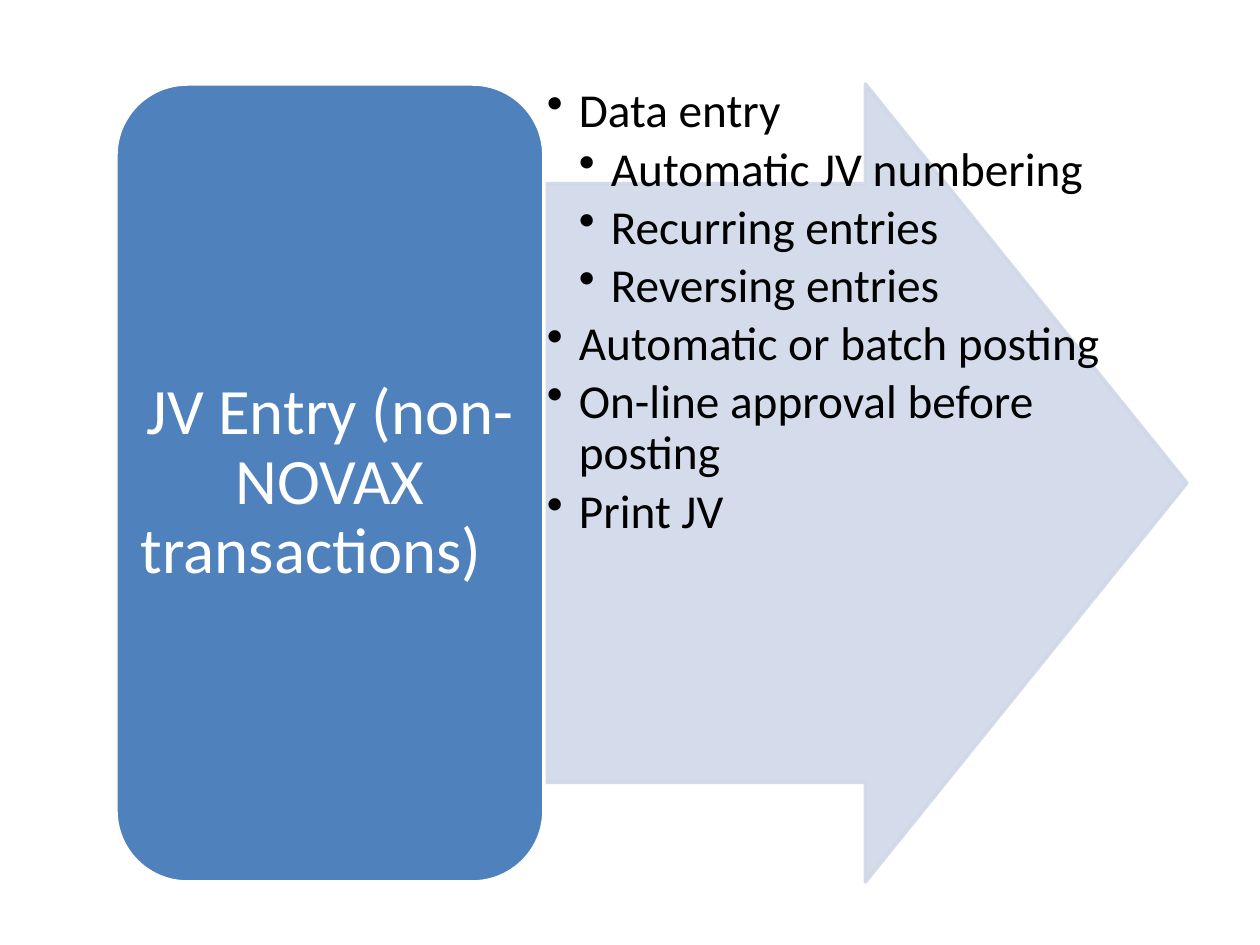
from dataclasses import dataclass

import pptx
import pptx.dml.color
import pptx.enum.shapes
import pptx.enum.text
import pptx.oxml
import pptx.oxml.ns
import pptx.util

SHAPE = pptx.enum.shapes.MSO_SHAPE
ALIGN = pptx.enum.text.PP_ALIGN
ANCHOR = pptx.enum.text.MSO_ANCHOR
NS = pptx.oxml.ns.nsdecls("a")
QN = pptx.oxml.ns.qn


@dataclass(frozen=True)
class Theme:
    font: str = "Calibri"
    block: str = "4F81BD"
    arrow: str = "D0D8E8"
    light: str = "FFFFFF"
    dark: str = "000000"
    title_pt: int = 37
    list_pt: int = 27
    line_pt: int = 2


@dataclass(frozen=True)
class Box:
    x: int
    y: int
    w: int
    h: int


@dataclass(frozen=True)
class Panel:
    box: Box
    kind: int
    adjustments: tuple[float, ...]
    fill: str
    line: str
    opacity: int


@dataclass(frozen=True)
class Item:
    text: str
    level: int = 0


@dataclass(frozen=True)
class TextBlock:
    box: Box
    items: tuple[Item, ...]
    size: int
    color: str
    inset_x: int
    inset_y: int
    anchor: int
    align: int
    space_after: int
    bullets: bool


THEME = Theme()
INDENT = 32
TOP, HEIGHT = 84, 798
BLOCK_BOX = Box(116, TOP, 428, HEIGHT)
ARROW_BOX = Box(BLOCK_BOX.x + BLOCK_BOX.w, TOP, 643, HEIGHT)

PANELS = (
    Panel(ARROW_BOX, SHAPE.RIGHT_ARROW, (0.75, 0.5), THEME.arrow, THEME.arrow, 90),
    Panel(BLOCK_BOX, SHAPE.ROUNDED_RECTANGLE, (), THEME.block, THEME.light, 100),
)

FEATURES = (
    Item("Data entry"),
    Item("Automatic JV numbering", 1),
    Item("Recurring entries", 1),
    Item("Reversing entries", 1),
    Item("Automatic or batch posting"),
    Item("On-line approval before posting"),
    Item("Print JV"),
)

TEXTS = (
    TextBlock(ARROW_BOX, FEATURES, THEME.list_pt, THEME.dark,
              3, 3, ANCHOR.TOP, ALIGN.LEFT, 15, True),
    TextBlock(BLOCK_BOX, (Item("JV Entry (non-NOVAX transactions)\t"),),
              THEME.title_pt, THEME.light,
              19, 10, ANCHOR.MIDDLE, ALIGN.CENTER, 35, False),
)


def px(n: int) -> int:
    return round(n * 914400 / 126)


def place(box: Box) -> tuple[int, ...]:
    return px(box.x), px(box.y), px(box.w), px(box.h)


def rgb(color: str) -> pptx.dml.color.RGBColor:
    return pptx.dml.color.RGBColor.from_string(color)


def draw_panel(s: pptx.slide.Slide, panel: Panel) -> None:
    sp = s.shapes.add_shape(panel.kind, *place(panel.box))
    sp.shadow.inherit = False
    for i, value in enumerate(panel.adjustments):
        sp.adjustments[i] = value
    sp.fill.solid()
    sp.fill.fore_color.rgb = rgb(panel.fill)
    sp.line.color.rgb = rgb(panel.line)
    sp.line.width = pptx.util.Pt(THEME.line_pt)
    if panel.opacity < 100:
        for color in sp._element.spPr.iter(QN("a:srgbClr")):
            color.append(pptx.oxml.parse_xml(
                f'<a:alpha {NS} val="{panel.opacity * 1000}"/>'))


def draw_text(s: pptx.slide.Slide, block: TextBlock) -> None:
    tf = s.shapes.add_textbox(*place(block.box)).text_frame
    tf.word_wrap = True
    tf.vertical_anchor = block.anchor
    tf.margin_left = tf.margin_right = px(block.inset_x)
    tf.margin_top = tf.margin_bottom = px(block.inset_y)
    tf.text = "\n".join(item.text for item in block.items)
    for p, item in zip(tf.paragraphs, block.items):
        p.alignment = block.align
        p.line_spacing = 0.9
        pPr = p._p.get_or_add_pPr()
        pPr.append(pptx.oxml.parse_xml(
            f'<a:spcAft {NS}><a:spcPct val="{block.space_after * 1000}"/></a:spcAft>'))
        if block.bullets:
            p.level = item.level + 1
            pPr.set("marL", str(px(INDENT * (item.level + 1))))
            pPr.set("indent", str(-px(INDENT)))
            pPr.append(pptx.oxml.parse_xml(f'<a:buChar {NS} char="•"/>'))
        for r in p.runs:
            r.font.name = THEME.font
            r.font.size = pptx.util.Pt(block.size)
            r.font.color.rgb = rgb(block.color)


def main() -> None:
    prs = pptx.Presentation()
    prs.slide_width, prs.slide_height = px(1260), px(945)
    s = prs.slides.add_slide(prs.slide_layouts[6])
    for panel, block in zip(PANELS, TEXTS):
        draw_panel(s, panel)
        draw_text(s, block)
    prs.save("out.pptx")


if __name__ == "__main__":
    main()
